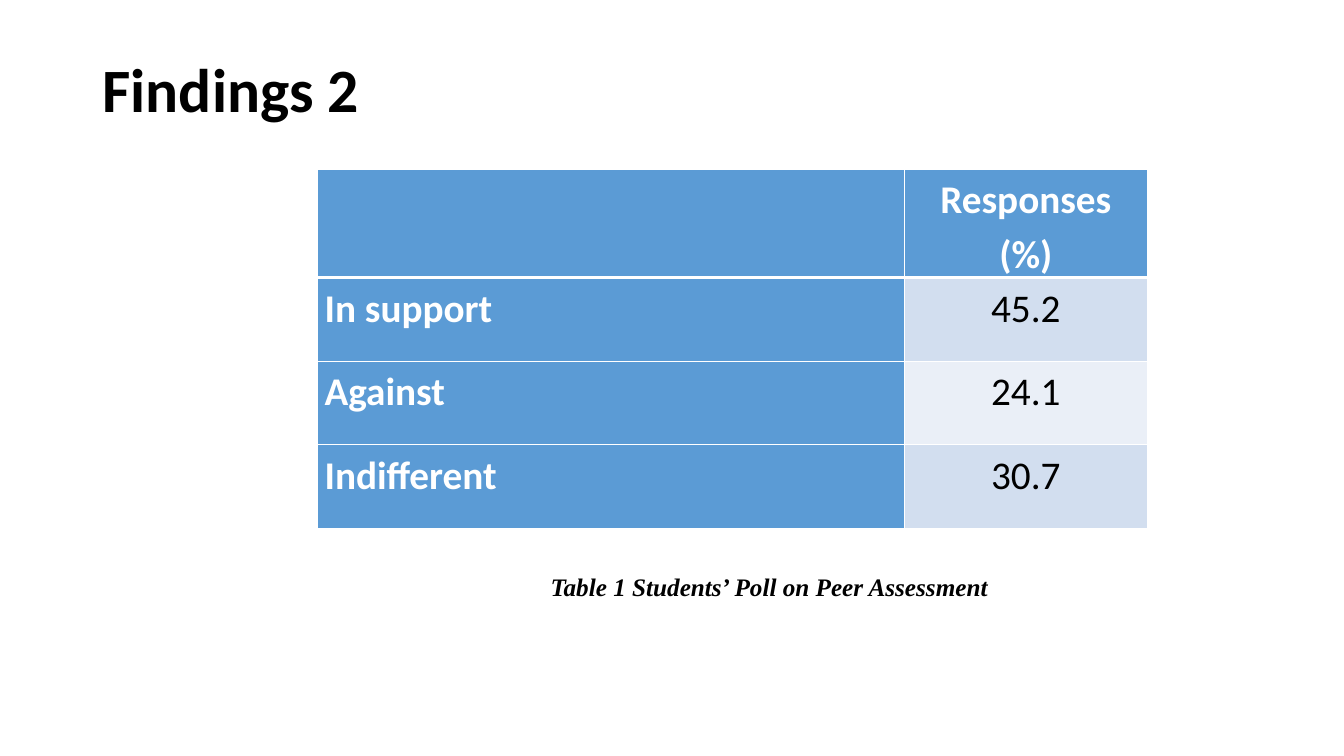
from lxml import etree
from pptx import Presentation
from pptx import util as u
from pptx.dml.color import RGBColor
from pptx.enum import text
from pptx.oxml.ns import qn

BLUE, WHITE, BLACK = "5B9BD5", "FFFFFF", "000000"
BANDS = ["D2DEEF", "EAEFF7"]
POLL = [("", "Responses (%)"), ("In support", "45.2"),
        ("Against", "24.1"), ("Indifferent", "30.7")]
COLUMN_WIDTHS = [5.82, 2.41]
ROW_HEIGHT = 0.83


def rgb(value):
    return RGBColor.from_string(value)


def set_attrs(obj, values):
    for name, value in values.items():
        setattr(obj, name, value)


def write(tf, content, color, font, para):
    p = tf.paragraphs[0]
    set_attrs(p, para)
    if content:
        r = p.add_run()
        r.text = content
        set_attrs(r.font, font)
        r.font.color.rgb = rgb(color)


def add_text(s, box, content, font, para, anchor):
    sp = s.shapes.add_textbox(*map(u.Inches, box))
    tf = sp.text_frame
    set_attrs(tf, {"word_wrap": True, "vertical_anchor": anchor})
    write(tf, content, BLACK, font, para)


def add_borders(cell, bottom):
    tc_pr = cell._tc.get_or_add_tcPr()
    widths = {"a:lnL": 1, "a:lnR": 1, "a:lnT": 1, "a:lnB": bottom}
    for i, (tag, width) in enumerate(widths.items()):
        ln = etree.Element(qn(tag), w=str(u.Pt(width)))
        fill = etree.SubElement(ln, qn("a:solidFill"))
        etree.SubElement(fill, qn("a:srgbClr"), val=WHITE)
        tc_pr.insert(i, ln)


def fill_cell(cell, content, row, col):
    heading = row == 0 or col == 0
    side = u.Inches(0.07)
    set_attrs(cell, {"margin_left": side, "margin_right": side,
                     "margin_top": 0, "margin_bottom": 0})
    cell.fill.solid()
    cell.fill.fore_color.rgb = rgb(BLUE if heading else BANDS[(row - 1) % 2])
    align = text.PP_ALIGN.CENTER if col else text.PP_ALIGN.JUSTIFY
    write(cell.text_frame, content, WHITE if heading else BLACK,
          {"name": "Calibri", "size": u.Pt(28), "bold": heading},
          {"alignment": align, "line_spacing": 1.15})
    add_borders(cell, 1 if row else 3)


def add_poll_table(s, left, top):
    size = sum(COLUMN_WIDTHS), ROW_HEIGHT * len(POLL)
    frame = s.shapes.add_table(len(POLL), len(COLUMN_WIDTHS),
                               *map(u.Inches, (left, top, *size)))
    table = frame.table
    for column, width in zip(table.columns, COLUMN_WIDTHS):
        column.width = u.Inches(width)
    for row, values in enumerate(POLL):
        table.rows[row].height = u.Inches(ROW_HEIGHT)
        for col, value in enumerate(values):
            fill_cell(table.cell(row, col), value, row, col)


def main():
    prs = Presentation()
    set_attrs(prs, {"slide_width": u.Inches(13.33), "slide_height": u.Inches(7.5)})
    s = prs.slides.add_slide(prs.slide_layouts[6])
    add_text(s, (0.92, 0.4, 11.5, 1.04), "Findings 2",
             {"name": "Calibri", "size": u.Pt(44), "bold": True},
             {"line_spacing": 0.9}, text.MSO_ANCHOR.MIDDLE)
    add_poll_table(s, 3.15, 1.68)
    add_text(s, (4.65, 5.47, 5.96, 0.51), "Table 1 Students’ Poll on Peer Assessment",
             {"name": "Times New Roman", "size": u.Pt(18), "bold": True, "italic": True},
             {"alignment": text.PP_ALIGN.CENTER, "line_spacing": 1.5,
              "space_after": u.Pt(10)}, text.MSO_ANCHOR.TOP)
    prs.save("out.pptx")


if __name__ == "__main__":
    main()
